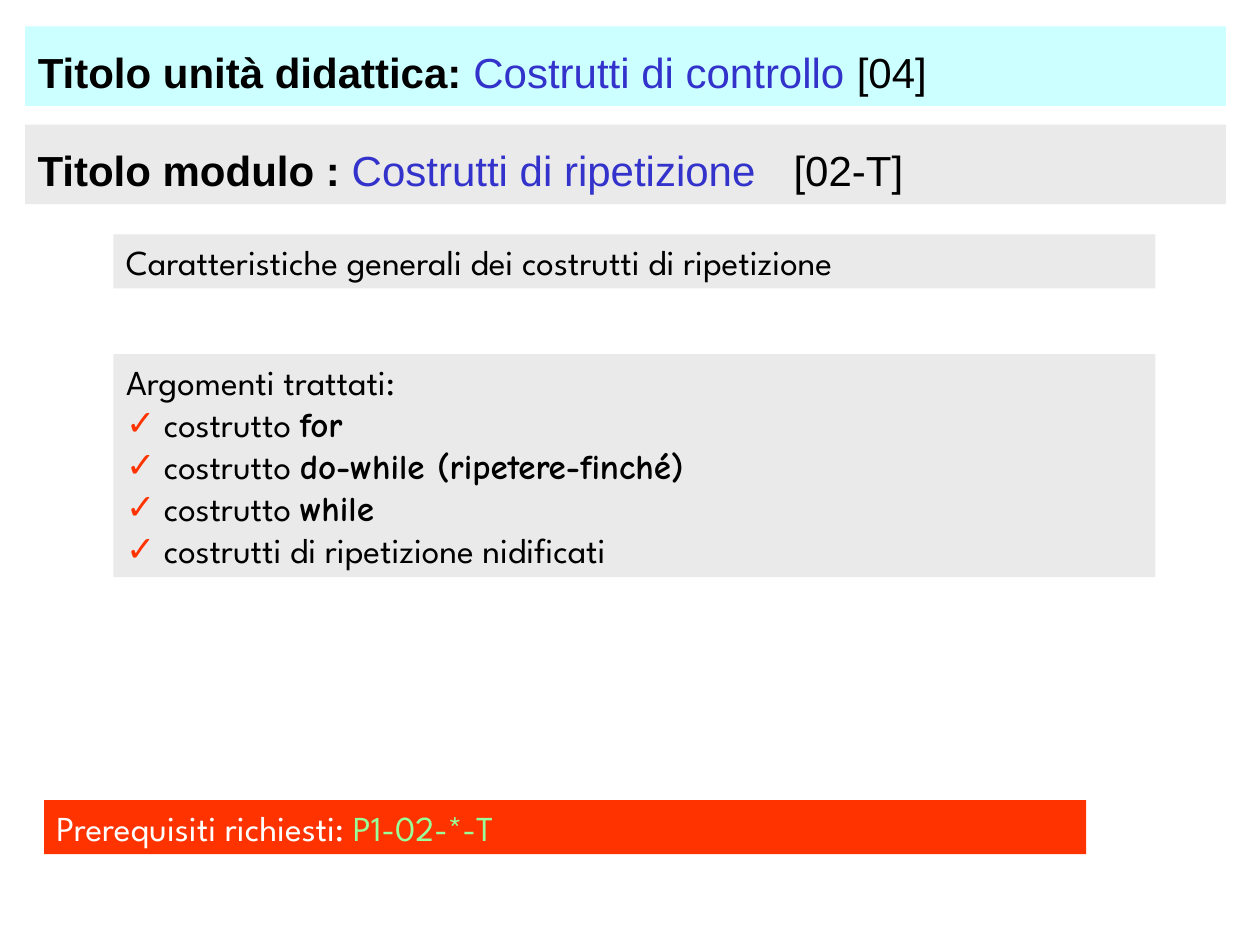
from dataclasses import dataclass

from lxml import etree
from pptx import Presentation
from pptx.dml.color import RGBColor
from pptx.enum.shapes import MSO_SHAPE
from pptx.enum.text import MSO_ANCHOR, MSO_AUTO_SIZE, PP_ALIGN
from pptx.oxml.ns import qn
from pptx.util import Inches, Pt

RECTANGLE = MSO_SHAPE.RECTANGLE
TOP, BOTTOM = MSO_ANCHOR.TOP, MSO_ANCHOR.BOTTOM
LEFT = PP_ALIGN.LEFT
NO_AUTOFIT = MSO_AUTO_SIZE.NONE

BLACK = RGBColor(0x00, 0x00, 0x00)
WHITE = RGBColor(0xFF, 0xFF, 0xFF)
BLUE = RGBColor(0x33, 0x33, 0xCC)
CYAN = RGBColor(0xCC, 0xFF, 0xFF)
GREY = RGBColor(0xEA, 0xEA, 0xEA)
RED = RGBColor(0xFF, 0x33, 0x00)
GREEN = RGBColor(0x99, 0xFF, 0x99)

HEADING_FONT, TEXT_FONT, CODE_FONT = "Arial", "League Spartan", "Comic Neue"
CODE_TAB = Inches(9.21)
BULLET_INDENT = Inches(0.3)


@dataclass
class Span:
    text: str
    color: RGBColor = BLACK
    font: str = TEXT_FONT
    size: int = 20
    bold: bool = False


@dataclass
class Line:
    spans: list[Span]
    bulleted: bool = False
    code_tab: bool = False


@dataclass
class Panel:
    left: float
    top: float
    width: float
    height: float
    fill: RGBColor
    lines: list[Line]
    anchor: MSO_ANCHOR = TOP
    bottom_inset: float = 0.05


def heading(top: float, fill: RGBColor, label: str, title: str, code: str) -> Panel:
    spans = [
        Span(label, BLACK, HEADING_FONT, 24, True),
        Span(title, BLUE, HEADING_FONT, 24),
        Span("\t" + code, BLACK, HEADING_FONT, 24),
    ]
    return Panel(0.2, top, 9.53, 0.63, fill, [Line(spans, code_tab=True)], BOTTOM, 0.07)


def topic(text: str, keyword: str = "") -> Line:
    spans = [Span(text)]
    if keyword:
        spans.append(Span(keyword, font=CODE_FONT, bold=True))
    return Line(spans, bulleted=True)


def format_paragraph(paragraph, line: Line) -> None:
    paragraph.alignment = LEFT
    paragraph.line_spacing = 1.0
    paragraph.space_before = paragraph.space_after = Pt(0)
    properties = paragraph._p.get_or_add_pPr()
    indent = BULLET_INDENT if line.bulleted else 0
    properties.set("marL", str(indent))
    properties.set("indent", str(-indent))
    if line.bulleted:
        color = etree.SubElement(properties, qn("a:buClr"))
        etree.SubElement(color, qn("a:srgbClr"), val=str(RED))
        etree.SubElement(properties, qn("a:buChar"), char="✓")
    else:
        etree.SubElement(properties, qn("a:buNone"))
    if line.code_tab:
        tabs = etree.SubElement(properties, qn("a:tabLst"))
        etree.SubElement(tabs, qn("a:tab"), pos=str(CODE_TAB), algn="r")


def add_span(paragraph, span: Span) -> None:
    run = paragraph.add_run()
    run.text = span.text
    run.font.name = span.font
    run.font.size = Pt(span.size)
    run.font.bold = span.bold
    run.font.color.rgb = span.color


def fill_panel(shape, panel: Panel) -> None:
    """Place, colour and write a panel into a placeholder or rectangle."""
    shape.left, shape.top = Inches(panel.left), Inches(panel.top)
    shape.width, shape.height = Inches(panel.width), Inches(panel.height)
    shape.fill.solid()
    shape.fill.fore_color.rgb = panel.fill
    shape.line.fill.background()
    frame = shape.text_frame
    frame.word_wrap = True
    frame.auto_size = NO_AUTOFIT
    frame.vertical_anchor = panel.anchor
    frame.margin_left = frame.margin_right = Inches(0.1)
    frame.margin_top = Inches(0.05)
    frame.margin_bottom = Inches(panel.bottom_inset)
    for index, line in enumerate(panel.lines):
        paragraph = frame.add_paragraph() if index else frame.paragraphs[0]
        format_paragraph(paragraph, line)
        for span in line.spans:
            add_span(paragraph, span)


def add_panel(slide, panel: Panel) -> None:
    box = slide.shapes.add_shape(RECTANGLE, 0, 0, 0, 0)
    box.shadow.inherit = False
    fill_panel(box, panel)


UNIT = heading(0.21, CYAN, "Titolo unità didattica: ", "Costrutti di controllo", "[04]")
MODULE = heading(0.99, GREY, "Titolo modulo : ", "Costrutti di ripetizione", "[02-T]")
SUMMARY = Panel(0.9, 1.86, 8.27, 0.43, GREY, [
    Line([Span("Caratteristiche generali dei costrutti di ripetizione")]),
])
TOPICS = Panel(0.9, 2.81, 8.27, 1.77, GREY, [
    Line([Span("Argomenti trattati:")]),
    topic("costrutto ", "for"),
    topic("costrutto ", "do-while (ripetere-finché)"),
    topic("costrutto ", "while"),
    topic("costrutti di ripetizione nidificati"),
])
PREREQUISITES = Panel(0.35, 6.35, 8.27, 0.43, RED, [
    Line([Span("Prerequisiti richiesti: ", WHITE), Span("P1-02-*-T", GREEN)]),
])


def main() -> None:
    deck = Presentation()
    deck.slide_width, deck.slide_height = Inches(10), Inches(7.5)
    slide = deck.slides.add_slide(deck.slide_layouts[1])
    fill_panel(slide.shapes.title, UNIT)
    fill_panel(slide.placeholders[1], TOPICS)
    for panel in (MODULE, SUMMARY, PREREQUISITES):
        add_panel(slide, panel)
    deck.save("out.pptx")


if __name__ == "__main__":
    main()
